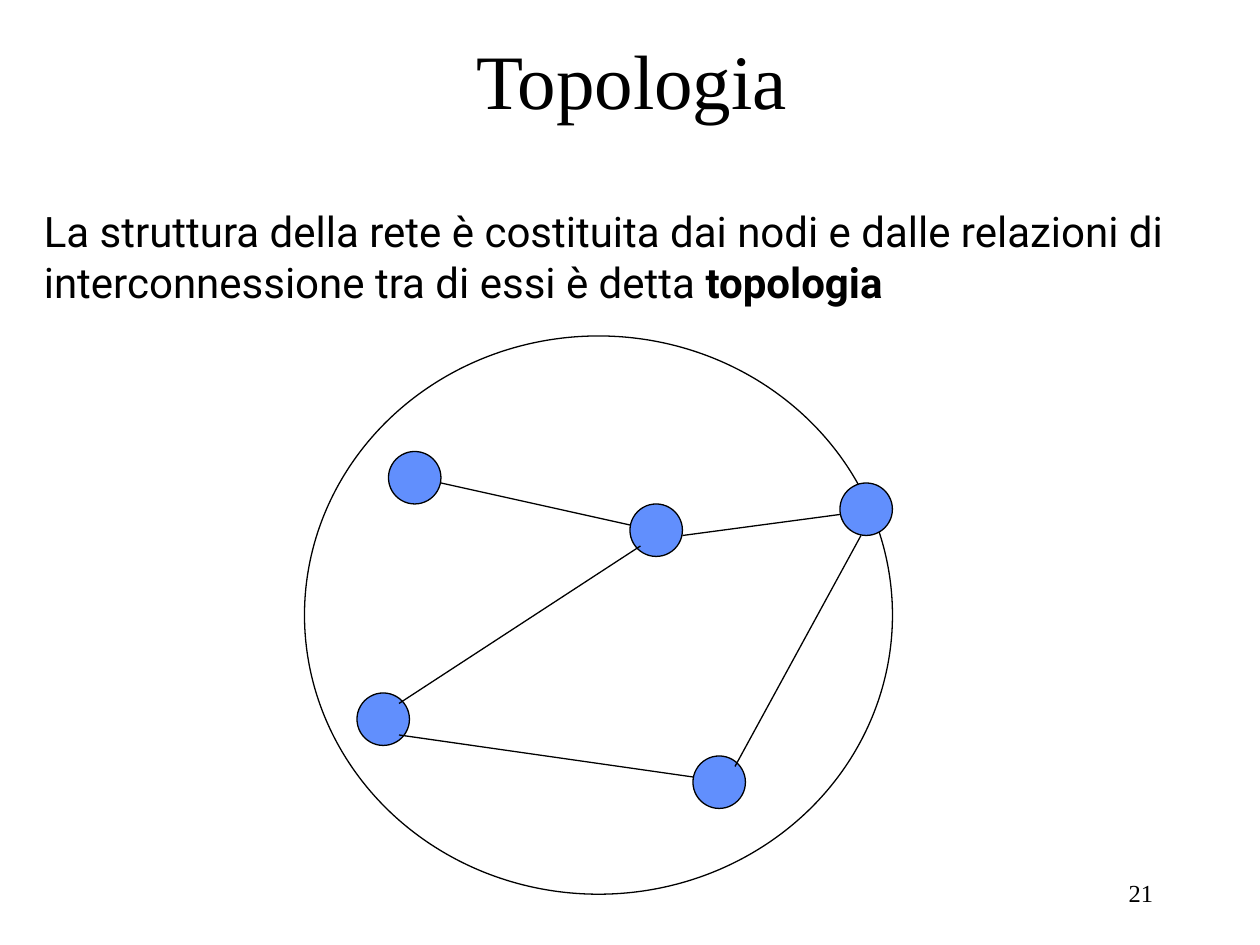
from dataclasses import dataclass
from typing import NamedTuple

from lxml import etree
from pptx import Presentation
from pptx.dml.color import RGBColor
from pptx.enum import shapes, text
from pptx.oxml import ns
from pptx.util import Pt


@dataclass(frozen=True)
class Theme:
    ink: RGBColor = RGBColor(0x00, 0x00, 0x00)
    node: RGBColor = RGBColor(0x61, 0x8F, 0xFD)
    serif: str = "Times New Roman"
    sans: str = "Roboto"
    title_size: float = 44
    body_size: float = 24
    number_size: float = 14
    stroke: float = 0.75


class Box(NamedTuple):
    left: float
    top: float
    width: float
    height: float


class Link(NamedTuple):
    x1: float
    y1: float
    x2: float
    y2: float


class Words(NamedTuple):
    content: str
    bold: bool = False


@dataclass(frozen=True)
class Label:
    box: Box
    runs: tuple[Words, ...]
    font: str
    size: float
    align: text.PP_ALIGN
    anchor: text.MSO_ANCHOR


THEME = Theme()
NODE_SIZE = 30
NETWORK = Box(174, 192, 336, 319)
NODES = [(360, 288), (396, 432), (222, 258), (480, 276), (204, 396)]
LINKS = [
    Link(252, 276, 360, 300),
    Link(390, 306, 480, 294),
    Link(228, 402, 366, 312),
    Link(228, 420, 396, 444),
    Link(492, 306, 420, 438),
]
LABELS = [
    Label(Box(516, 492, 150, 36), (Words("21"),), THEME.serif, THEME.number_size,
          text.PP_ALIGN.RIGHT, text.MSO_ANCHOR.MIDDLE),
    Label(Box(55, 0, 612, 90), (Words("Topologia"),), THEME.serif, THEME.title_size,
          text.PP_ALIGN.CENTER, text.MSO_ANCHOR.MIDDLE),
    Label(Box(18, 114, 678, 65),
          (Words("La struttura della rete è costituita dai nodi e dalle relazioni di "
                 "interconnessione tra di essi è detta "),
           Words("topologia", bold=True)),
          THEME.sans, THEME.body_size, text.PP_ALIGN.LEFT, text.MSO_ANCHOR.TOP),
]


def draw_label(slide, label: Label) -> None:
    frame = slide.shapes.add_textbox(*map(Pt, label.box)).text_frame
    frame.word_wrap = True
    frame.vertical_anchor = label.anchor
    paragraph = frame.paragraphs[0]
    paragraph.alignment = label.align
    for words in label.runs:
        run = paragraph.add_run()
        run.text = words.content
        run.font.name = label.font
        run.font.size = Pt(label.size)
        run.font.bold = words.bold
        run.font.color.rgb = THEME.ink


def draw_circle(slide, box: Box, fill: RGBColor | None = None) -> None:
    circle = slide.shapes.add_shape(shapes.MSO_SHAPE.OVAL, *map(Pt, box))
    circle.shadow.inherit = False
    if fill is None:
        circle.fill.background()
    else:
        circle.fill.solid()
        circle.fill.fore_color.rgb = fill
    circle.line.color.rgb = THEME.ink
    circle.line.width = Pt(THEME.stroke)


def draw_link(slide, link: Link) -> None:
    edge = slide.shapes.add_connector(shapes.MSO_CONNECTOR.STRAIGHT, *map(Pt, link))
    edge.line.color.rgb = THEME.ink
    edge.line.width = Pt(THEME.stroke)
    etree.SubElement(edge._element.spPr, ns.qn("a:effectLst"))


def main() -> None:
    deck = Presentation()
    deck.slide_width, deck.slide_height = Pt(720), Pt(540)
    slide = deck.slides.add_slide(deck.slide_layouts[6])
    draw_circle(slide, NETWORK)
    for left, top in NODES:
        draw_circle(slide, Box(left, top, NODE_SIZE, NODE_SIZE), THEME.node)
    for link in LINKS:
        draw_link(slide, link)
    for label in LABELS:
        draw_label(slide, label)
    deck.save("out.pptx")


if __name__ == "__main__":
    main()
